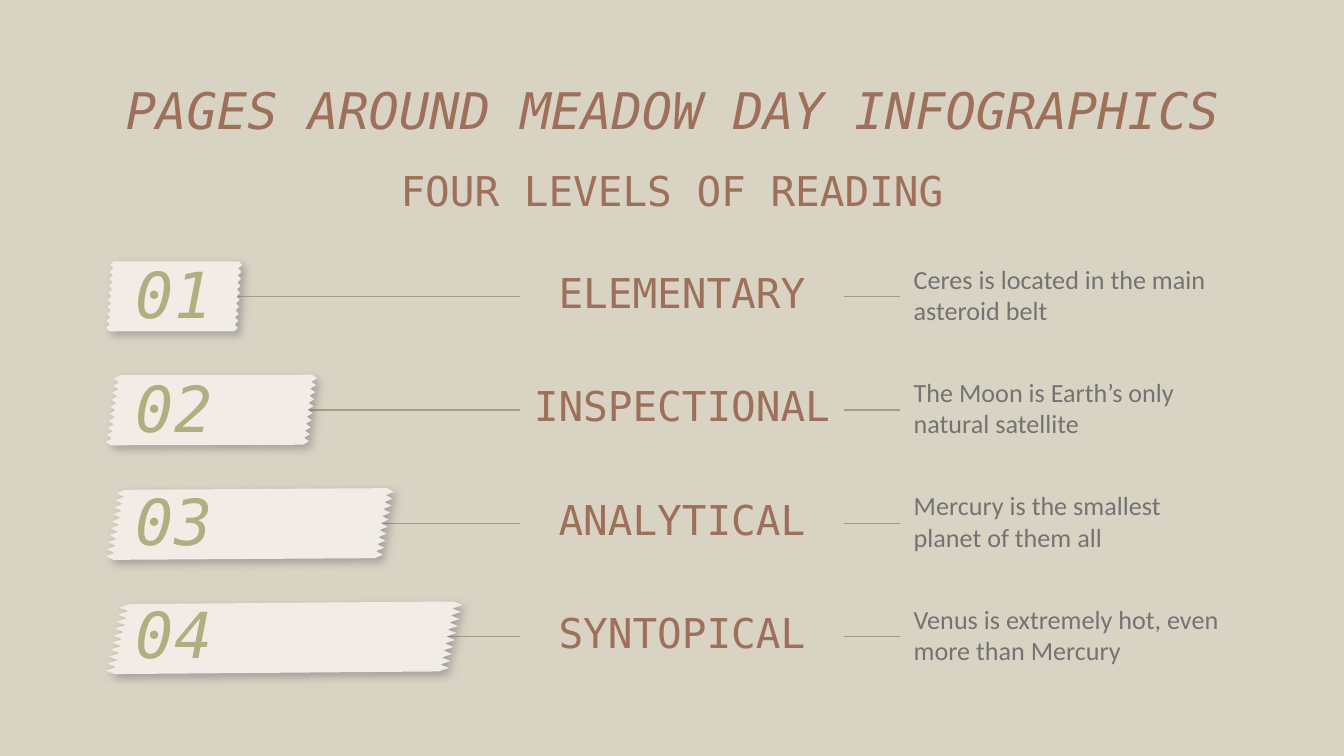
from lxml import etree
from pptx import Presentation
from pptx.dml.color import RGBColor
from pptx.enum.shapes import MSO_CONNECTOR
from pptx.enum.text import MSO_ANCHOR, PP_ALIGN
from pptx.oxml.ns import qn
from pptx.util import Pt

STRAIGHT = MSO_CONNECTOR.STRAIGHT
TOP, MIDDLE = MSO_ANCHOR.TOP, MSO_ANCHOR.MIDDLE
LEFT, CENTER = PP_ALIGN.LEFT, PP_ALIGN.CENTER

TITLE = "PAGES AROUND MEADOW DAY INFOGRAPHICS"
SUBTITLE = "FOUR LEVELS OF READING"
LEVELS = [
    {"number": "01", "name": "ELEMENTARY", "fact": "Ceres is located in the main asteroid belt",
     "right": 129.6, "lean": 2.2, "depth": 1.8, "rise": 0, "line_end": 115.9},
    {"number": "02", "name": "INSPECTIONAL", "fact": "The Moon is Earth’s only natural satellite",
     "right": 169.9, "lean": 4.3, "depth": 2.9, "rise": 0.3, "line_end": 140.4},
    {"number": "03", "name": "ANALYTICAL", "fact": "Mercury is the smallest planet of them all",
     "right": 211, "lean": 5.8, "depth": 4, "rise": 0.9, "line_end": 189.4},
    {"number": "04", "name": "SYNTOPICAL", "fact": "Venus is extremely hot, even more than Mercury",
     "right": 247.7, "lean": 7.2, "depth": 5, "rise": 1.4, "line_end": 227.5},
]
BACKGROUND, LINE, TAPE, SHADOW = "D9D3C4", "AA9A82", "F2ECE7", "747373"
MONO = "DejaVu Sans Mono"
STYLES = {
    "title": {"size": Pt(27), "name": MONO, "italic": True, "color": "9E7059"},
    "heading": {"size": Pt(22), "name": MONO, "italic": False, "color": "9E7059"},
    "fact": {"size": Pt(14), "name": "Calibri", "italic": False, "color": "747373"},
    "number": {"size": Pt(34), "name": MONO, "italic": True, "color": "B1AF80"},
}
FIRST_ROW, ROW_STEP = 158.9, 60.75
TAPE_LEFT, TAPE_TOP, TEETH, TOOTH = 56.9, -17, 9, 3.75


def rgb(value):
    """Turn a hex string into a colour."""
    return RGBColor.from_string(value)


def add_text(shapes, text, box, style, align=CENTER, anchor=TOP, side=7.2, top=0, spacing=1):
    """Add a wrapped text box in one of the named styles."""
    holder = shapes.add_textbox(*map(Pt, box))
    frame = holder.text_frame
    settings = {"word_wrap": True, "vertical_anchor": anchor, "margin_left": Pt(side),
                "margin_right": Pt(side), "margin_top": Pt(top), "margin_bottom": Pt(7.2)}
    for key, value in settings.items():
        setattr(frame, key, value)
    paragraph = frame.paragraphs[0]
    paragraph.alignment = align
    paragraph.line_spacing = spacing
    run = paragraph.add_run()
    run.text = text
    for key, value in STYLES[style].items():
        if key == "color":
            run.font.color.rgb = rgb(value)
        else:
            setattr(run.font, key, value)
    return holder


def add_line(shapes, start, end):
    """Add a thin line without a shadow."""
    line = shapes.add_connector(STRAIGHT, *map(Pt, start + end))
    line.line.color.rgb = rgb(LINE)
    line.line.width = Pt(0.75)
    etree.SubElement(line._element.spPr, qn("a:effectLst"))
    return line


def torn_edge(x, y, lean, notch):
    """List the zigzag points of a torn end from top to bottom."""
    return [(Pt(x - lean * half / (2 * TEETH) + notch * (half % 2)), Pt(y + TOOTH * half / 2))
            for half in range(-1, 2 * TEETH + 2)]


def add_tape(shapes, level, row):
    """Add a slanted strip of paper tape with torn ends and a soft shadow."""
    lean, depth, top = level["lean"], level["depth"], row + TAPE_TOP
    right = torn_edge(level["right"], top, lean, -depth)
    left = torn_edge(TAPE_LEFT + lean, top + level["rise"], lean, depth)
    outline = right + left[::-1]
    builder = shapes.build_freeform(*outline[0])
    builder.add_line_segments(outline[1:], close=True)
    tape = builder.convert_to_shape()
    tape.fill.solid()
    tape.fill.fore_color.rgb = rgb(TAPE)
    tape.line.fill.background()
    tape.shadow.inherit = False
    effects = tape._element.spPr.find(qn("a:effectLst"))
    shadow = etree.SubElement(effects, qn("a:outerShdw"), blurRad=str(Pt(4.5)), dist=str(Pt(3)),
                              dir=str(43 * 60000), algn="bl", rotWithShape="0")
    color = etree.SubElement(shadow, qn("a:srgbClr"), val=SHADOW)
    etree.SubElement(color, qn("a:alpha"), val="50000")


def add_level(slide, level, row):
    """Add one row: tape, number, name, fact and joining lines."""
    shapes = slide.shapes.add_group_shape().shapes
    name = add_text(shapes, level["name"], (278.6, row - 12.6, 173.5, 25.2), "heading",
                    side=5, spacing=0.9)
    fact = add_text(shapes, level["fact"], (482.4, row - 18, 181.4, 36), "fact", align=LEFT)
    tape_line = add_line(shapes, (278.6, row), (level["line_end"], row))
    tape_line.begin_connect(name, 1)
    fact_line = add_line(shapes, (452.1, row), (482.4, row))
    fact_line.begin_connect(name, 3)
    fact_line.end_connect(fact, 1)
    add_tape(shapes, level, row)
    add_text(shapes, level["number"], (56.2, row - 18, 74.2, 32.4), "number",
             anchor=MIDDLE, top=7.2)


def main():
    """Build the slide and save it."""
    deck = Presentation()
    deck.slide_width, deck.slide_height = Pt(720), Pt(405)
    slide = deck.slides.add_slide(deck.slide_layouts[6])
    slide.background.fill.solid()
    slide.background.fill.fore_color.rgb = rgb(BACKGROUND)
    add_text(slide.shapes, TITLE, (56.2, 42.5, 607.6, 37.4), "title")
    add_text(slide.shapes, SUBTITLE, (56.2, 88.6, 607.6, 29.5), "heading")
    for index, level in enumerate(LEVELS):
        add_level(slide, level, FIRST_ROW + index * ROW_STEP)
    deck.save("out.pptx")


if __name__ == "__main__":
    main()
